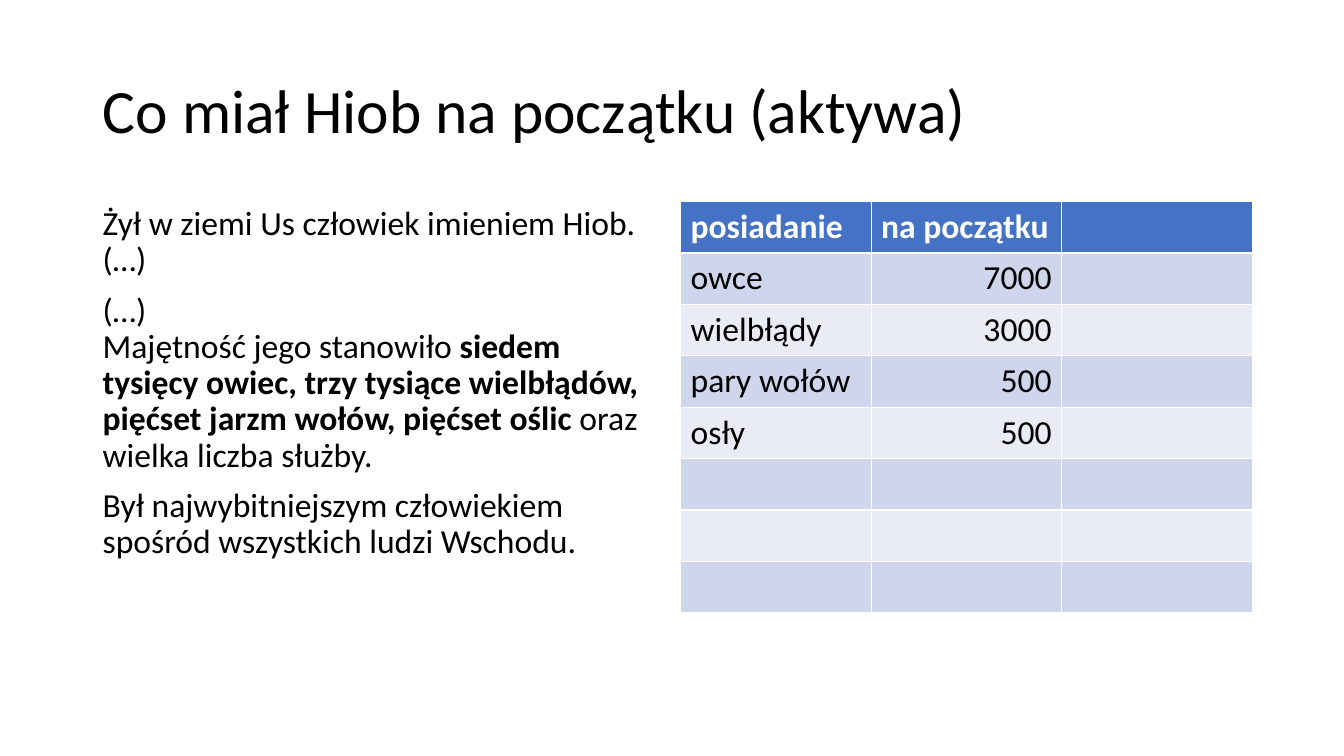
"""Build the slide on what Job owned at the beginning."""
from pptx import Presentation
from pptx.dml.color import RGBColor
from pptx.enum.text import MSO_ANCHOR, PP_ALIGN
from pptx.util import Inches, Pt

LEFT, RIGHT = PP_ALIGN.LEFT, PP_ALIGN.RIGHT
MIDDLE = MSO_ANCHOR.MIDDLE
FONT = "Calibri"
COLORS = {"text": "000000", "white": "FFFFFF", "head": "4472C4",
          "odd": "CFD5EA", "even": "E9EBF5"}


def style(para, size, color="text", bold=False, align=LEFT):
    para.alignment = align
    font = para.font
    font.name, font.size, font.bold = FONT, Pt(size), bold
    font.color.rgb = RGBColor.from_string(COLORS[color])


prs = Presentation()
prs.slide_width, prs.slide_height = Inches(13.33), Inches(7.5)
slide = prs.slides.add_slide(prs.slide_layouts[5])

title = slide.shapes.title
title.left, title.top = Inches(0.92), Inches(0.4)
title.width, title.height = Inches(11.5), Inches(1.45)
title.text_frame.text = "Co miał Hiob na początku (aktywa)"
title.text_frame.vertical_anchor = MIDDLE
title.text_frame.paragraphs[0].line_spacing = 0.9
style(title.text_frame.paragraphs[0], 44)

story = [
    [("Żył w ziemi Us człowiek imieniem Hiob. (…)", False)],
    [("(…)\vMajętność jego stanowiło", False),
     (" siedem tysięcy owiec, trzy tysiące wielbłądów, "
      "pięćset jarzm wołów, pięćset oślic", True),
     (" oraz wielka liczba służby.", False)],
    [("Był najwybitniejszym człowiekiem spośród wszystkich ludzi Wschodu.", False)],
]
body = slide.shapes.add_textbox(Inches(0.92), Inches(2), Inches(5.67), Inches(4.76))
frame = body.text_frame
frame.word_wrap = True
for i, parts in enumerate(story):
    para = frame.add_paragraph() if i else frame.paragraphs[0]
    style(para, 24)
    para.line_spacing, para.space_before = 0.9, Pt(10)
    for text, bold in parts:
        first, *rest = text.split("\v")
        para.add_run().text = first
        for line in rest:
            para.add_line_break()
            para.add_run().text = line
        if bold:
            para.runs[-1].font.bold = True

goods = [("posiadanie", "na początku"), ("owce", "7000"), ("wielbłądy", "3000"),
         ("pary wołów", "500"), ("osły", "500")]
ROWS, COLS = 8, 3
table = slide.shapes.add_table(ROWS, COLS, Inches(6.75), Inches(2),
                               Inches(5.67), Inches(0.51 * ROWS)).table
for r in range(ROWS):
    fill = "head" if r == 0 else "odd" if r % 2 else "even"
    for c in range(COLS):
        cell = table.cell(r, c)
        cell.fill.solid()
        cell.fill.fore_color.rgb = RGBColor.from_string(COLORS[fill])
        if r < len(goods) and c < len(goods[r]):
            cell.text = goods[r][c]
        style(cell.text_frame.paragraphs[0], 24, "text" if r else "white",
              r == 0, RIGHT if r and c == 1 else LEFT)

prs.save("out.pptx")
